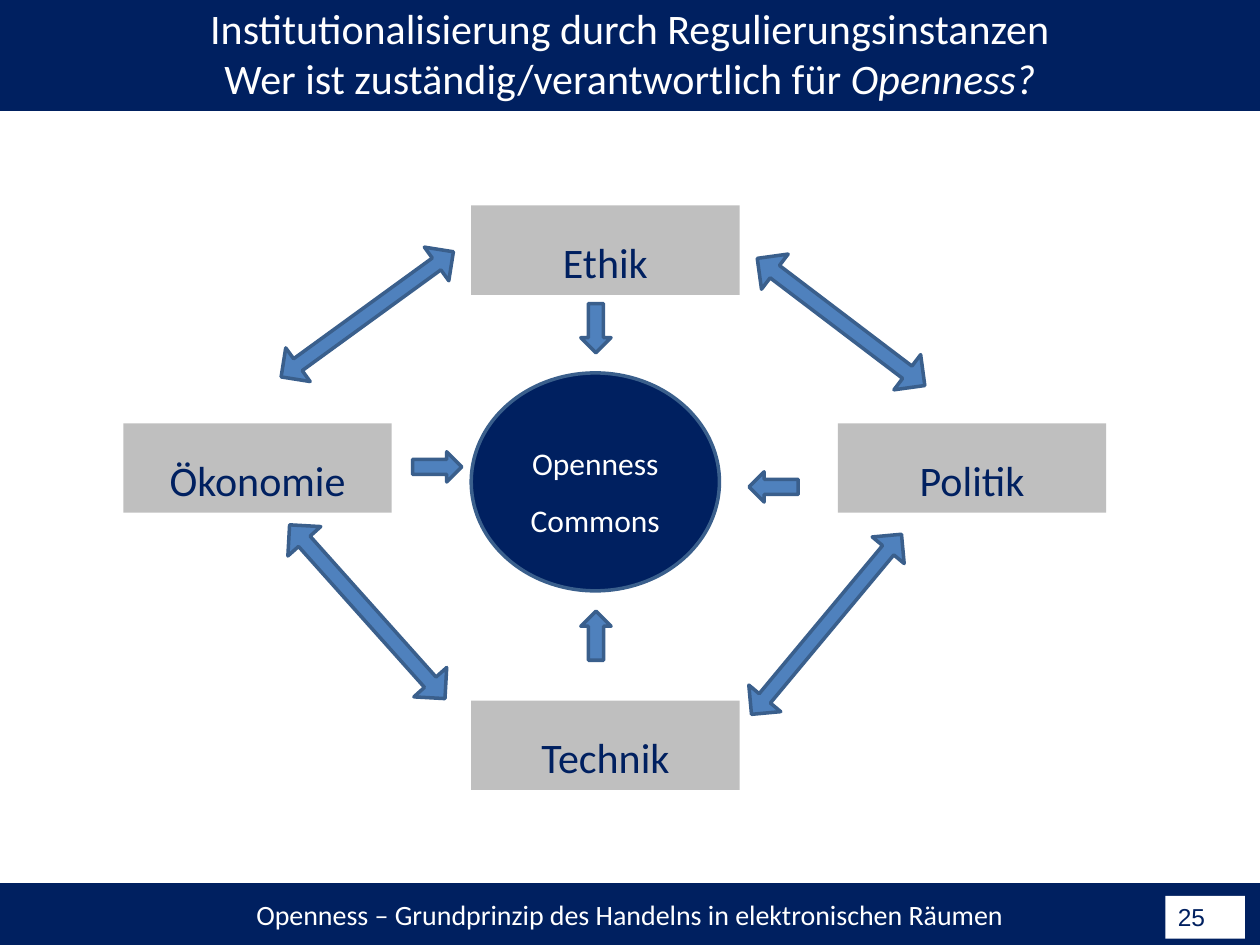
from pptx import Presentation
from pptx.dml.color import RGBColor
from pptx.enum.shapes import MSO_SHAPE as Shape
from pptx.enum.text import MSO_ANCHOR as Anchor, PP_ALIGN as Align
from pptx.util import Inches, Pt

COLORS = {"navy": "002060", "gray": "BFBFBF", "white": "FFFFFF",
          "blue": "4F81BD", "outline": "3A5F8C"}


def add_figure(kind, box, fill, outlined=False, rotation=0):
    """Add a preset shape; box is left, top, width, height in inches."""
    figure = slide.shapes.add_shape(kind, *[Inches(v) for v in box])
    figure.shadow.inherit = False
    figure.rotation = rotation
    figure.fill.solid()
    figure.fill.fore_color.rgb = RGBColor.from_string(COLORS[fill])
    if outlined:
        figure.line.color.rgb = RGBColor.from_string(COLORS["outline"])
        figure.line.width = Pt(2)
    else:
        figure.line.fill.background()
    return figure


def write(figure, lines, size, color, font="Calibri", align=Align.CENTER,
          anchor=Anchor.TOP, spacing=None):
    frame = figure.text_frame
    frame.word_wrap = True
    frame.vertical_anchor = anchor
    for i, line in enumerate(lines):
        paragraph = frame.paragraphs[0] if i == 0 else frame.add_paragraph()
        paragraph.alignment = align
        paragraph.line_spacing = spacing
        paragraph.font.size = Pt(size)
        paragraph.font.name = font
        paragraph.font.color.rgb = RGBColor.from_string(COLORS[color])
        paragraph.add_run().text = line
    return frame


prs = Presentation()
prs.slide_width, prs.slide_height = Inches(10), Inches(7.5)
slide = prs.slides.add_slide(prs.slide_layouts[6])

# Footer and page number
footer = add_figure(Shape.RECTANGLE, (0, 7.01, 10, 0.49), "navy")
footer_frame = write(
    footer, ["Openness – Grundprinzip des Handelns in elektronischen Räumen"],
    16, "white", anchor=Anchor.MIDDLE)
footer_frame.margin_left = footer_frame.margin_right = 0
footer_frame.margin_top = footer_frame.margin_bottom = 0
page_number = add_figure(Shape.RECTANGLE, (9.25, 7.11, 0.63, 0.34), "white")
write(page_number, ["25"], 14, "navy", font="Arial", align=Align.LEFT)

# Title
title = add_figure(Shape.RECTANGLE, (0, -0.03, 10, 0.91), "navy")
title_frame = write(title, ["Institutionalisierung durch Regulierungsinstanzen",
                            "Wer ist zuständig/verantwortlich für "], 24, "white")
emphasis = title_frame.paragraphs[1].add_run()
emphasis.text = "Openness?"
emphasis.font.italic = True

# Regulating instances around the centre
for name, left, top in [("Ökonomie", 0.98, 3.36), ("Politik", 6.65, 3.36),
                        ("Technik", 3.74, 5.56), ("Ethik", 3.74, 1.63)]:
    instance = add_figure(Shape.RECTANGLE, (left, top, 2.13, 0.71), "gray")
    write(instance, [name], 24, "navy", spacing=1.5)

# Double arrows between neighbouring instances
for box, rotation in [((2.07, 2.33, 1.69, 0.33), 324),
                      ((5.84, 2.38, 1.67, 0.35), 217.2),
                      ((1.99, 4.68, 1.85, 0.35), 228.2),
                      ((5.63, 4.79, 1.86, 0.33), 309.8)]:
    exchange = add_figure(Shape.LEFT_RIGHT_ARROW, box, "blue", True, rotation)
    exchange.adjustments[0] = 0.351

# Centre and the arrows pointing to it
centre = add_figure(Shape.OVAL, (3.74, 2.96, 1.97, 1.73), "navy", True)
write(centre, ["Openness", "Commons"], 18, "white", anchor=Anchor.MIDDLE, spacing=1.5)
for left, top, rotation in [(4.61, 2.41, 0), (4.61, 4.85, 180),
                            (6.02, 3.67, 90), (3.35, 3.51, 270)]:
    add_figure(Shape.DOWN_ARROW, (left, top, 0.24, 0.39), "blue", True, rotation)

prs.save("out.pptx")
